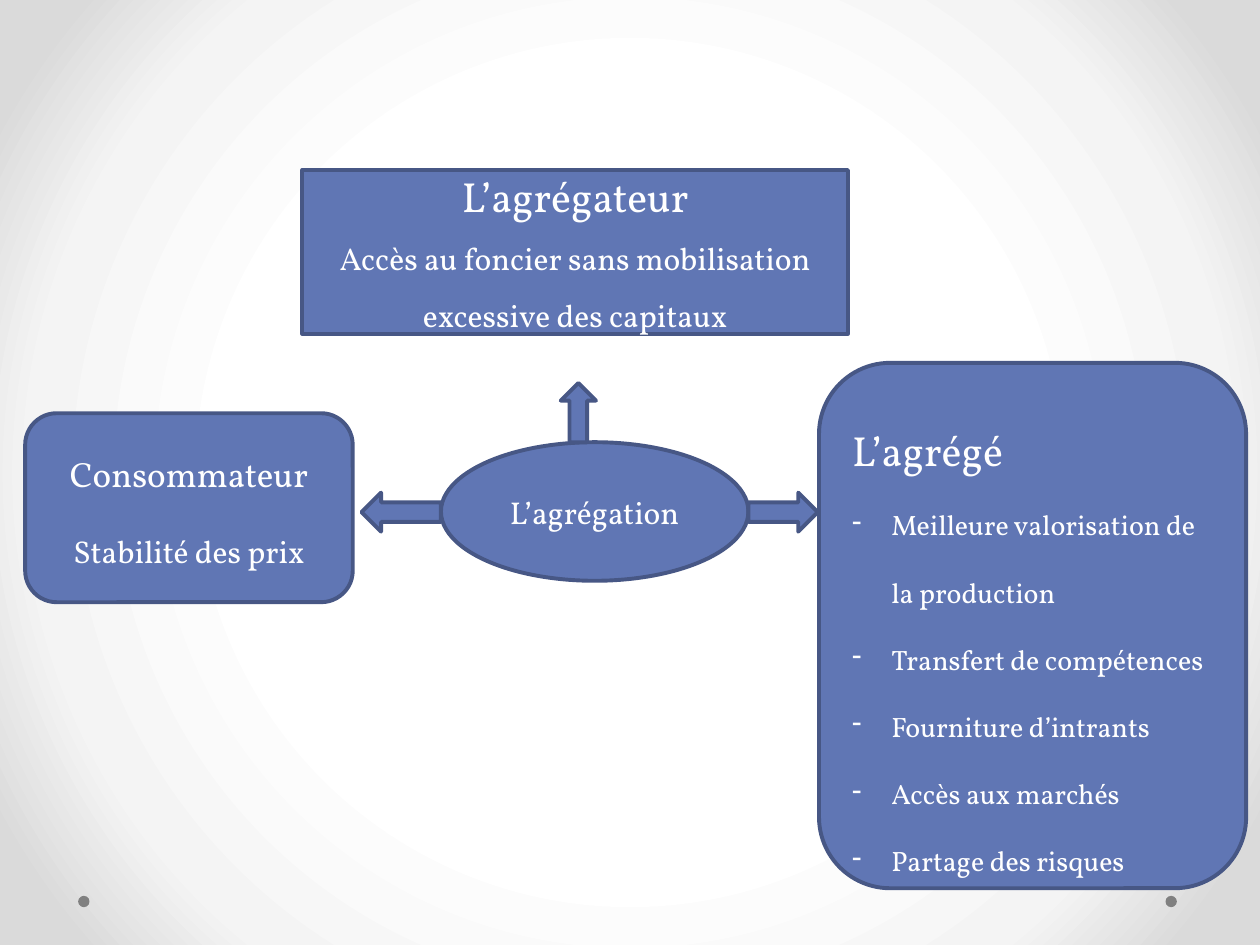
import dataclasses
from typing import Optional

import lxml.etree
import pptx
import pptx.dml.color
import pptx.enum.shapes
import pptx.enum.text
import pptx.oxml.ns
import pptx.presentation
import pptx.slide
import pptx.text.text
import pptx.util

Inches = pptx.util.Inches
Shape = pptx.enum.shapes.MSO_SHAPE
Align = pptx.enum.text.PP_ALIGN
Color = pptx.dml.color.RGBColor
qn = pptx.oxml.ns.qn


@dataclasses.dataclass(frozen=True)
class Theme:
    font: str = "Vollkorn"
    text: str = "FFFFFF"
    fill: str = "6076B4"
    outline: str = "475785"
    dot: str = "808080"
    outline_width: float = 2.25
    title: int = 24
    subtitle: int = 20
    body: int = 18
    item: int = 16
    background: tuple = ((50, "FFFFFF"), (76, "F4F4F4"), (92, "DADADA"))


THEME = Theme()


@dataclasses.dataclass(frozen=True)
class Line:
    text: str
    size: int
    align: Align = Align.CENTER
    spacing: float = 1.0
    before: float = 0
    bullet: Optional[str] = None


@dataclasses.dataclass(frozen=True)
class Block:
    kind: Shape
    left: float
    top: float
    width: float
    height: float
    lines: tuple = ()
    top_inset: float = 0.05


BENEFITS = (
    "Meilleure valorisation de la production",
    "Transfert de compétences",
    "Fourniture d’intrants",
    "Accès aux marchés",
    "Partage des risques",
)

BLOCKS = (
    Block(Shape.OVAL, 3.5, 3.51, 2.44, 1.1, (Line("L’agrégation", THEME.body),)),
    Block(Shape.RIGHT_ARROW, 5.94, 3.91, 0.55, 0.31),
    Block(Shape.LEFT_ARROW, 2.87, 3.91, 0.63, 0.31),
    Block(Shape.UP_ARROW, 4.45, 3.04, 0.28, 0.47),
    Block(Shape.RECTANGLE, 2.4, 1.35, 4.33, 1.3, (
        Line("L’agrégateur", THEME.title),
        Line("Accès au foncier sans mobilisation excessive des capitaux",
             THEME.body, spacing=1.5),
    )),
    Block(Shape.ROUNDED_RECTANGLE, 0.2, 3.28, 2.6, 1.5, (
        Line("Consommateur", THEME.subtitle),
        Line("Stabilité des prix", THEME.body, before=21.6),
    ), top_inset=0.1),
    Block(Shape.ROUNDED_RECTANGLE, 6.5, 2.88, 3.39, 4.17, (
        Line("L’agrégé", THEME.title, Align.LEFT, 2.0),
        *(Line(benefit, THEME.item, Align.LEFT, 2.0, bullet="-")
          for benefit in BENEFITS),
    )),
)


def paint_background(slide: pptx.slide.Slide) -> None:
    slide.background.fill.gradient()
    gradient = slide.element.find(".//" + qn("a:gradFill"))
    for child in list(gradient):
        gradient.remove(child)
    stops = lxml.etree.SubElement(gradient, qn("a:gsLst"))
    for position, color in THEME.background:
        stop = lxml.etree.SubElement(stops, qn("a:gs"), pos=str(position * 1000))
        lxml.etree.SubElement(stop, qn("a:srgbClr"), val=color)
    circle = lxml.etree.SubElement(gradient, qn("a:path"), path="circle")
    lxml.etree.SubElement(
        circle, qn("a:fillToRect"), {side: "50000" for side in "ltrb"})


def draw_dot(slide: pptx.slide.Slide, left: float) -> None:
    dot = slide.shapes.add_shape(
        Shape.OVAL, Inches(left), Inches(7.11), Inches(0.09), Inches(0.09))
    dot.shadow.inherit = False
    dot.fill.solid()
    dot.fill.fore_color.rgb = Color.from_string(THEME.dot)
    dot.line.fill.background()


def write_line(paragraph: pptx.text.text._Paragraph, line: Line) -> None:
    paragraph.text = line.text
    paragraph.alignment = line.align
    paragraph.line_spacing = line.spacing
    paragraph.space_before = pptx.util.Pt(line.before)
    if line.bullet:
        properties = paragraph._p.get_or_add_pPr()
        properties.set("marL", str(Inches(0.31)))
        properties.set("indent", str(-Inches(0.31)))
        lxml.etree.SubElement(properties, qn("a:buChar"), char=line.bullet)
    paragraph.font.name = THEME.font
    paragraph.font.size = pptx.util.Pt(line.size)
    paragraph.font.color.rgb = Color.from_string(THEME.text)


def draw_block(slide: pptx.slide.Slide, block: Block) -> None:
    shape = slide.shapes.add_shape(
        block.kind, Inches(block.left), Inches(block.top),
        Inches(block.width), Inches(block.height))
    shape.shadow.inherit = False
    shape.fill.solid()
    shape.fill.fore_color.rgb = Color.from_string(THEME.fill)
    shape.line.color.rgb = Color.from_string(THEME.outline)
    shape.line.width = pptx.util.Pt(THEME.outline_width)
    frame = shape.text_frame
    frame.word_wrap = True
    frame.vertical_anchor = pptx.enum.text.MSO_ANCHOR.MIDDLE
    frame.margin_top = Inches(block.top_inset)
    for index, line in enumerate(block.lines):
        paragraph = frame.add_paragraph() if index else frame.paragraphs[0]
        write_line(paragraph, line)


def main() -> None:
    presentation = pptx.Presentation()
    presentation.slide_width = Inches(10)
    presentation.slide_height = Inches(7.5)
    slide = presentation.slides.add_slide(presentation.slide_layouts[6])
    paint_background(slide)
    for left in (9.25, 0.62):
        draw_dot(slide, left)
    for block in BLOCKS:
        draw_block(slide, block)
    presentation.save("out.pptx")


if __name__ == "__main__":
    main()
